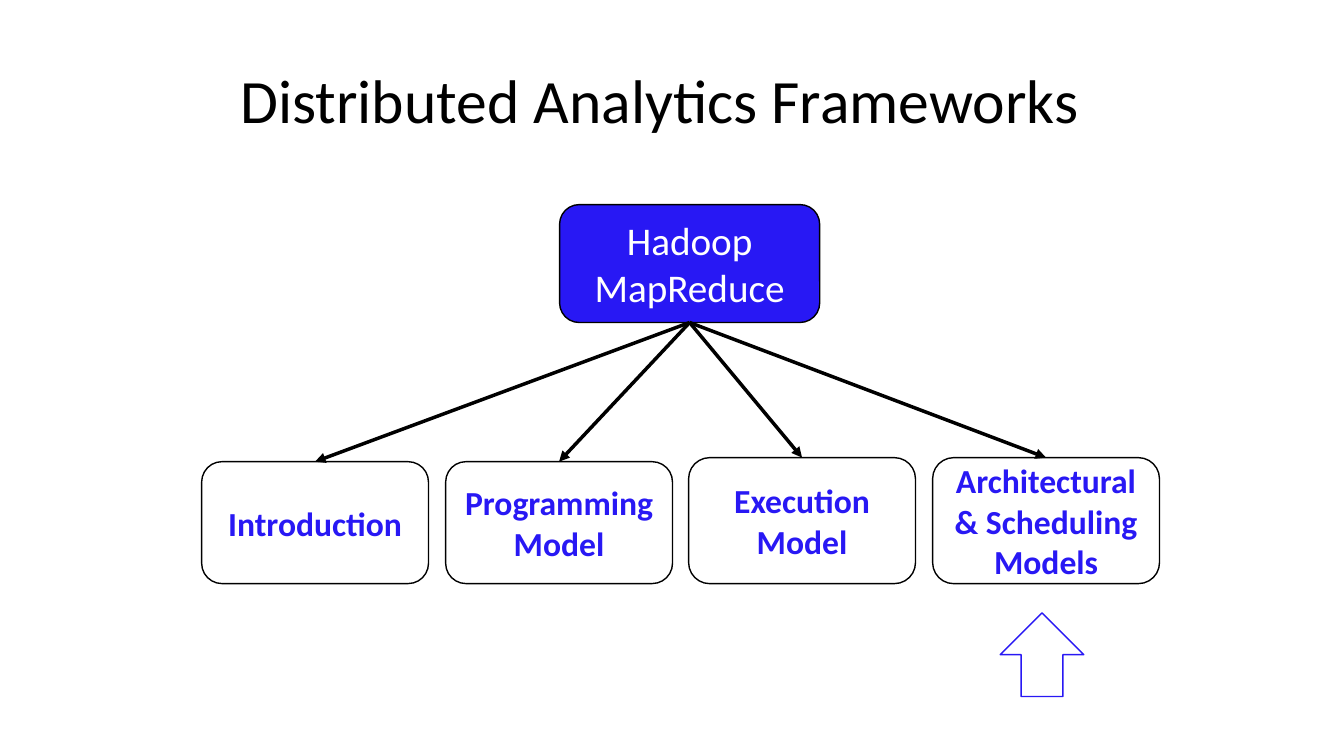
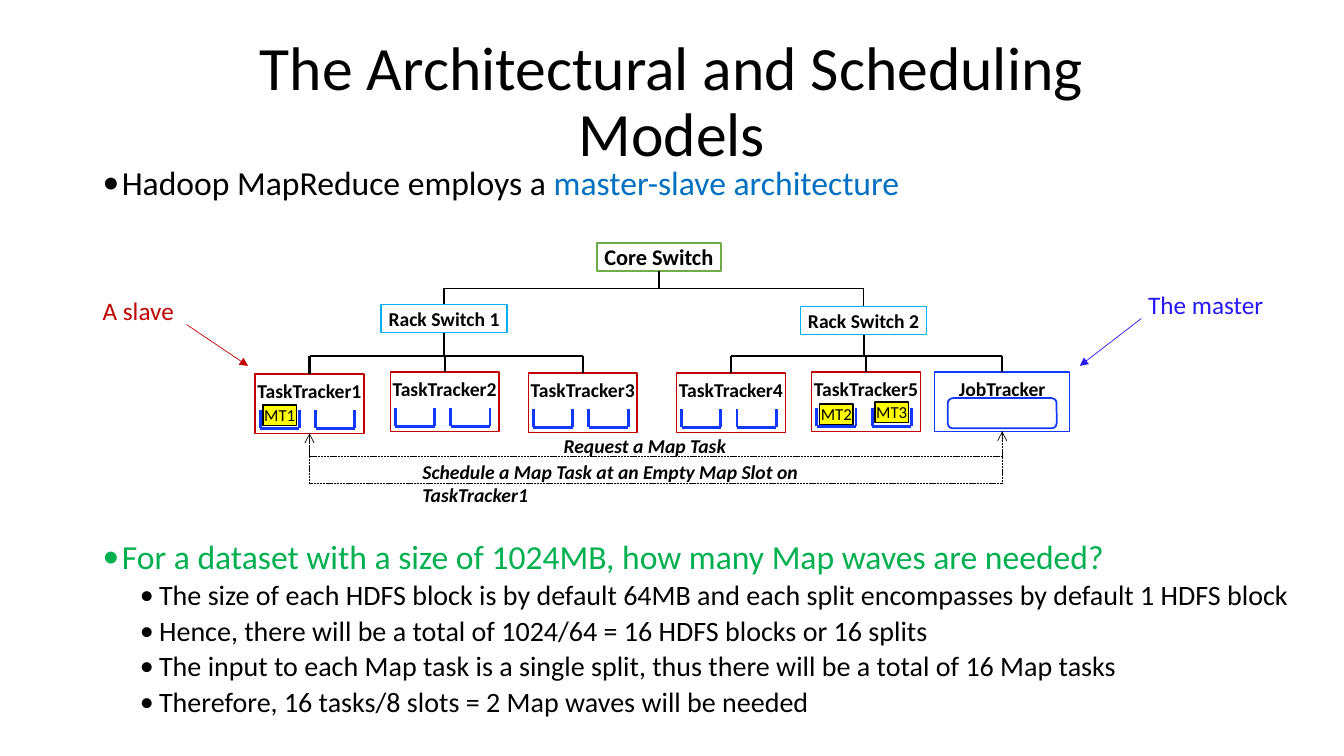
from typing import NamedTuple

from lxml.etree import SubElement
from pptx import Presentation
from pptx.dml.color import RGBColor
from pptx.enum.dml import MSO_LINE as DASH
from pptx.enum.shapes import MSO_CONNECTOR, MSO_SHAPE as SHAPE
from pptx.enum.text import MSO_ANCHOR as ANCHOR, PP_ALIGN as ALIGN
from pptx.oxml.ns import qn
from pptx.util import Inches, Pt


class Theme:
    font = "Calibri"
    black, white, yellow = "000000", "FFFFFF", "FFFF00"
    indigo, slot_blue, sky, emphasis = "2818F4", "1138FB", "00B0F0", "0070C0"
    red, core_green, question_green = "C00000", "70AD47", "00B050"
    title, root, heading, detail = 44, 28, 24, 20
    callout, core, label, task = 18, 16, 14, 12


class Box(NamedTuple):
    left: float
    top: float
    width: float
    height: float

    def inside(self, left, top, width, height):
        return Box(self.left + left, self.top + top, width, height)

    def inches(self):
        return [Inches(round(length, 2)) for length in self]


# Shared drawing helpers

def rgb(color):
    return RGBColor.from_string(color)


def write(frame, text, *, size, color=Theme.black, bold=False, italic=False,
          align=ALIGN.LEFT, anchor=ANCHOR.TOP, insets=(0.1, 0.05),
          spacing=1.0, before=0, bullet_at=None):
    """Append a paragraph per line; text may also be a list of (text, color)."""
    frame.word_wrap = True
    frame.vertical_anchor = anchor
    frame.margin_left = frame.margin_right = Inches(insets[0])
    frame.margin_top = frame.margin_bottom = Inches(insets[1])
    lines = [[(line, color)] for line in text.split("\n")] if isinstance(text, str) else [text]
    for line in lines:
        first = not frame.paragraphs[0].runs
        paragraph = frame.paragraphs[0] if first else frame.add_paragraph()
        paragraph.alignment = align
        paragraph.line_spacing = spacing
        paragraph.space_before = Pt(0 if first else before)
        if bullet_at is not None:
            properties = paragraph._p.get_or_add_pPr()
            properties.set("marL", str(Inches(bullet_at)))
            properties.set("indent", str(Inches(-0.19)))
            SubElement(properties, qn("a:buFont")).set("typeface", Theme.font)
            SubElement(properties, qn("a:buChar")).set("char", "•")
        for words, run_color in line:
            run = paragraph.add_run()
            run.text = words
            font = run.font
            font.name, font.size = Theme.font, Pt(size)
            font.bold, font.italic = bold, italic
            font.color.rgb = rgb(run_color)


def add_text(slide, box, text, **style):
    frame = slide.shapes.add_textbox(*box.inches()).text_frame
    write(frame, text, **style)
    return frame


def add_node(slide, box, text="", kind=SHAPE.RECTANGLE, fill=None,
             line=Theme.black, weight=1, **style):
    node = slide.shapes.add_shape(kind, *box.inches())
    node.shadow.inherit = False
    if fill:
        node.fill.solid()
        node.fill.fore_color.rgb = rgb(fill)
    else:
        node.fill.background()
    node.line.color.rgb = rgb(line)
    node.line.width = Pt(weight)
    if text:
        style = {"align": ALIGN.CENTER, "anchor": ANCHOR.MIDDLE, **style}
        write(node.text_frame, text, **style)
    return node


def add_line(slide, start, end, color=Theme.black, weight=1, dash=None, arrow=None):
    """Each end is an (x, y) point in EMU or a (shape, side) pair."""
    line = slide.shapes.add_connector(MSO_CONNECTOR.STRAIGHT, 0, 0, 0, 0)
    if hasattr(start[0], "shape_id"):
        line.begin_connect(*start)
    else:
        line.begin_x, line.begin_y = start
    if hasattr(end[0], "shape_id"):
        line.end_connect(*end)
    else:
        line.end_x, line.end_y = end
    line.line.color.rgb = rgb(color)
    line.line.width = Pt(weight)
    if dash:
        line.line.dash_style = dash
    properties = line._element.spPr
    if arrow:
        SubElement(properties.find(qn("a:ln")), qn("a:tailEnd")).set("type", arrow)
    SubElement(properties, qn("a:effectLst"))


def middle(shape):
    return shape.left + shape.width // 2


def add_title(slide, box, text):
    add_text(slide, box, text, size=Theme.title, align=ALIGN.CENTER,
             anchor=ANCHOR.MIDDLE, spacing=0.9)


# Overview slide

def topic_tree(slide, area):
    root = add_node(slide, area.inside(3.55, 0, 2.58, 1.17), "Hadoop MapReduce",
                    SHAPE.ROUNDED_RECTANGLE, Theme.indigo, size=Theme.root, color=Theme.white)
    topics = [("Introduction", 2.55), ("Programming Model", 2.55),
              ("Execution Model", 2.51), ("Architectural & Scheduling\nModels", 2.51)]
    width, gap, bottom = 2.25, 0.17, 3.76
    pitch = (area.width - width) / (len(topics) - 1)
    for column, (topic, top) in enumerate(topics):
        leaf = add_node(slide, area.inside(column * pitch, top, width, bottom - top), topic,
                        SHAPE.ROUNDED_RECTANGLE, Theme.white,
                        size=Theme.heading, color=Theme.indigo, bold=True)
        add_line(slide, (root, 2), (leaf, 0), weight=2.5, arrow="triangle")
    # Marker under the current topic
    add_node(slide, area.inside(7.92, 4.05, 0.83, 0.83), kind=SHAPE.UP_ARROW,
             fill=Theme.white, line=Theme.indigo)


def overview_slide(slide):
    add_title(slide, Box(1.92, 0.3, 9.25, 1.45), "Distributed Analytics Frameworks")
    topic_tree(slide, Box(2, 2.03, 9.5, 4.88))


# Architecture slide

def branch(slide, parent, children, bus, weight):
    """Join a switch to its children through a horizontal bus."""
    add_line(slide, (parent, 2), (middle(parent), bus), weight=weight)
    turns = [middle(children[0]), middle(parent), middle(children[-1])]
    if weight < 1.5:
        turns.pop(1)
    for left, right in zip(turns, turns[1:]):
        add_line(slide, (left, bus), (right, bus), weight=weight)
    for child in children:
        add_line(slide, (middle(child), bus), (child, 0), weight=weight)


def machine(slide, box, name, line):
    return add_node(slide, box, name, line=line, size=Theme.label, bold=True,
                    anchor=ANCHOR.TOP, insets=(0, 0.05))


def map_slot(slide, box):
    left, top, width, height = box.inches()
    right, bottom = left + width, top + height
    corners = [(left, top), (left, bottom), (right, bottom), (right, top)]
    for start, end in zip(corners, corners[1:]):
        add_line(slide, start, end, color=Theme.slot_blue, weight=2)


def task_tracker(slide, box, name, tasks):
    tracker = machine(slide, box, name, Theme.red)
    for left in (0.05, 0.6):
        map_slot(slide, box.inside(left, 0.36, 0.39, 0.18))
    for task, left, top in tasks:
        add_node(slide, box.inside(left, top, 0.33, 0.2), task, fill=Theme.yellow,
                 size=Theme.task, insets=(0, 0.05))
    return tracker


def job_tracker(slide, box):
    tracker = machine(slide, box, "JobTracker", Theme.slot_blue)
    add_node(slide, box.inside(0.13, 0.26, 1.08, 0.3), kind=SHAPE.ROUNDED_RECTANGLE,
             line=Theme.slot_blue, weight=1.25)
    return tracker


def message(slide, sender, receiver, lane):
    """Dashed route from below one machine up to another."""
    style = {"weight": 0.5, "dash": DASH.SQUARE_DOT}
    turns = (middle(sender), lane), (middle(receiver), lane)
    add_line(slide, (sender, 2), turns[0], **style)
    add_line(slide, *turns, **style)
    add_line(slide, turns[1], (receiver, 2), arrow="arrow", **style)


def cluster(slide, area):
    # Switches
    switch = {"bold": True, "insets": (0, 0.05)}
    core = add_node(slide, area.inside(3.42, 0.01, 1.23, 0.28), "Core Switch",
                    line=Theme.core_green, size=Theme.core, **switch)
    racks = [add_node(slide, area.inside(left, top, 1.25, 0.28), f"Rack Switch {number}",
                      line=Theme.sky, size=Theme.label, **switch)
             for number, (left, top) in enumerate([(1.28, 0.62), (5.44, 0.64)], 1)]
    # Machines
    trackers = [(0.03, 1.31, [("MT1", 0.08, 0.31)]), (1.37, 1.29, []), (2.74, 1.3, []),
                (4.21, 1.3, []), (5.55, 1.29, [("MT2", 0.08, 0.32), ("MT3", 0.63, 0.3)])]
    machines = [task_tracker(slide, area.inside(left, top, 1.08, 0.59),
                             f"TaskTracker{number}", tasks)
                for number, (left, top, tasks) in enumerate(trackers, 1)]
    machines.append(job_tracker(slide, area.inside(6.77, 1.29, 1.34, 0.59)))
    # Wiring
    branch(slide, core, racks, Inches(area.top + 0.46), 1)
    for rack, group in zip(racks, (machines[:3], machines[3:])):
        branch(slide, rack, group, Inches(area.top + 1.13), 1.5)
    # Messages
    message(slide, machines[0], machines[-1], Inches(area.top + 2.13))
    message(slide, machines[-1], machines[0], Inches(area.top + 2.4))
    caption = {"size": Theme.label, "bold": True, "italic": True, "insets": (0, 0)}
    add_text(slide, area.inside(3.09, 1.91, 1.7, 0.24), "Request a Map Task", **caption)
    add_text(slide, area.inside(1.69, 2.16, 4.8, 0.24),
             "Schedule a Map Task at an Empty Map Slot on TaskTracker1", **caption)


def callout(slide, box, text, color, start, end):
    add_text(slide, box, text, size=Theme.callout, color=color)
    points = [(Inches(box.left + x), Inches(box.top + y)) for x, y in (start, end)]
    add_line(slide, *points, color=color, weight=0.5, arrow="triangle")


def map_waves(slide, box):
    frame = add_text(slide, box,
                     "For a dataset with a size of 1024MB, how many Map waves are needed?",
                     size=Theme.heading, color=Theme.question_green,
                     spacing=0.9, bullet_at=0.19)
    for step in (
        "The size of each HDFS block is by default 64MB and each split encompasses "
        "by default 1 HDFS block",
        "Hence, there will be a total of 1024/64 = 16 HDFS blocks or 16 splits",
        "The input to each Map task is a single split, thus there will be a total of 16 Map tasks",
        "Therefore, 16 tasks/8 slots = 2 Map waves will be needed",
    ):
        write(frame, step, size=Theme.detail, spacing=0.9, before=3.75, bullet_at=0.56)


def architecture_slide(slide):
    add_title(slide, Box(1.5, 0.3, 10.33, 1.45), "The Architectural and Scheduling Models")
    add_text(slide, Box(0.92, 1.6, 12, 0.5),
             [("Hadoop MapReduce employs a ", Theme.black),
              ("master-slave architecture", Theme.emphasis)],
             size=Theme.heading, spacing=0.9, bullet_at=0.19)
    cluster(slide, Box(2.5, 2.4, 8.11, 2.7))
    callout(slide, Box(0.92, 2.88, 1.1, 0.4), "A slave", Theme.red,
            (0.93, 0.34), (1.54, 0.75))
    callout(slide, Box(11.29, 2.82, 1.4, 0.4), "The master", Theme.indigo,
            (0.03, 0.34), (-0.58, 0.81))
    map_waves(slide, Box(0.92, 5.31, 12, 2.1))


def main():
    deck = Presentation()
    deck.slide_width, deck.slide_height = Inches(13.33), Inches(7.5)
    for build in (overview_slide, architecture_slide):
        build(deck.slides.add_slide(deck.slide_layouts[6]))
    deck.save("out.pptx")


if __name__ == "__main__":
    main()
